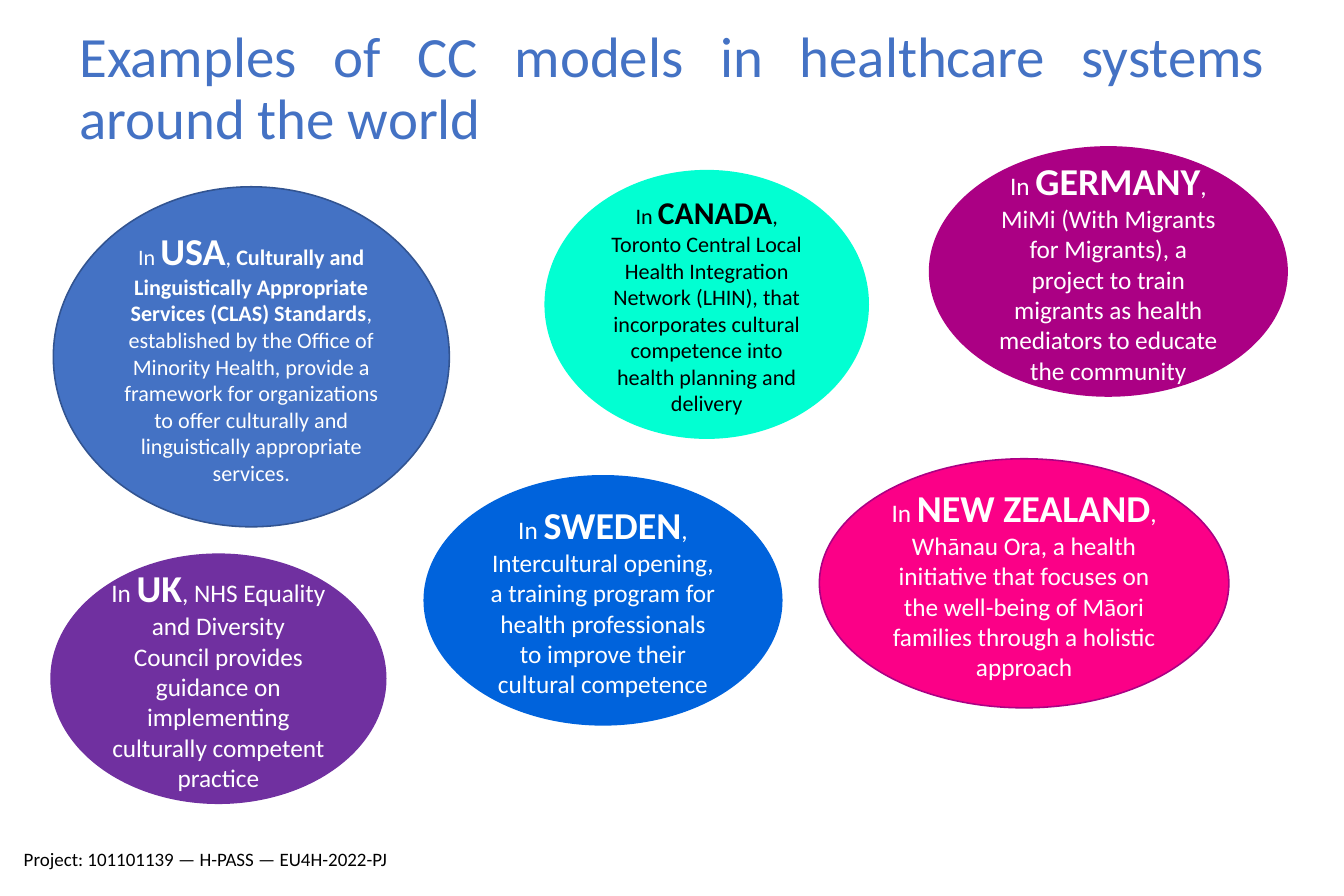
from pptx import Presentation
from pptx.dml.color import RGBColor
from pptx.enum.shapes import MSO_SHAPE
from pptx.enum.text import MSO_ANCHOR, PP_ALIGN
from pptx.util import Inches, Pt

ELLIPSE = MSO_SHAPE.OVAL
TOP, MIDDLE = MSO_ANCHOR.TOP, MSO_ANCHOR.MIDDLE
LEFT, CENTER, JUSTIFY = PP_ALIGN.LEFT, PP_ALIGN.CENTER, PP_ALIGN.JUSTIFY

WHITE = RGBColor(0xFF, 0xFF, 0xFF)
BLACK = RGBColor(0x00, 0x00, 0x00)
BLUE = RGBColor(0x44, 0x72, 0xC4)
DARK_BLUE = RGBColor(0x32, 0x54, 0x91)
AQUA = RGBColor(0x02, 0xFF, 0xD2)
PURPLE = RGBColor(0x70, 0x30, 0xA0)
ROYAL_BLUE = RGBColor(0x00, 0x63, 0xDC)
MAGENTA = RGBColor(0xAB, 0x00, 0x84)
PINK = RGBColor(0xFB, 0x00, 0x87)

FONT = "Calibri"
SLIDE_WIDTH, SLIDE_HEIGHT = Inches(11.81), Inches(7.87)
COLUMNS, ROWS = 300, 200

TITLE_BOX = (15.2, 5.1, 269.7, 27.7)
FOOTER_BOX = (2.8, 188, 92.2, 6.9)

COUNTRIES = [
    dict(box=(11.9, 41.7, 88.4, 75.9), country="USA", fill=BLUE, outline=DARK_BLUE,
         size=14, programme="Culturally and Linguistically Appropriate Services (CLAS) Standards",
         detail=", established by the Office of Minority Health, provide a framework for "
                "organizations to offer culturally and linguistically appropriate services."),
    dict(box=(121.7, 38.1, 72.1, 59.7), country="CANADA", fill=AQUA, outline=AQUA,
         size=14, country_size=20, color=BLACK,
         detail=", Toronto Central Local Health Integration Network (LHIN), that "
                "incorporates cultural competence into health planning and delivery"),
    dict(box=(11.4, 123.7, 74.7, 55.6), country="UK", fill=PURPLE, outline=PURPLE,
         detail=", NHS Equality and Diversity Council provides guidance on implementing "
                "culturally competent practice"),
    dict(box=(94.7, 106.2, 79.8, 55.6), country="SWEDEN", fill=ROYAL_BLUE, outline=ROYAL_BLUE,
         detail=", Intercultural opening, a training program for health professionals "
                "to improve their cultural competence"),
    dict(box=(207.5, 32.8, 79.8, 55.6), country="GERMANY", fill=MAGENTA, outline=MAGENTA,
         detail=", MiMi (With Migrants for Migrants), a project to train migrants as "
                "health mediators to educate the community"),
    dict(box=(182.9, 102.4, 91.4, 55.6), country="NEW ZEALAND", fill=PINK, outline=MAGENTA,
         detail=", Whānau Ora, a health initiative that focuses on the well-being of "
                "Māori families through a holistic approach"),
]


def place(box):
    left, top, width, height = box
    column, row = SLIDE_WIDTH / COLUMNS, SLIDE_HEIGHT / ROWS
    return [round(length) for length in (left * column, top * row, width * column, height * row)]


def write(paragraph, text, size, color, bold=False):
    run = paragraph.add_run()
    run.text = text
    run.font.name = FONT
    run.font.size = Pt(size)
    run.font.bold = bold
    run.font.color.rgb = color


def start_paragraph(shape, align, anchor, line_spacing=1.0):
    frame = shape.text_frame
    frame.word_wrap = True
    frame.vertical_anchor = anchor
    paragraph = frame.paragraphs[0]
    paragraph.alignment = align
    paragraph.line_spacing = line_spacing
    return paragraph


def add_caption(slide, box, text, size, color, align=LEFT, line_spacing=1.0):
    caption = slide.shapes.add_textbox(*place(box))
    paragraph = start_paragraph(caption, align, TOP, line_spacing)
    write(paragraph, text, size=size, color=color)


def add_country(slide, box, country, detail, fill, outline, programme=None,
                size=16, country_size=24, color=WHITE):
    bubble = slide.shapes.add_shape(ELLIPSE, *place(box))
    bubble.shadow.inherit = False
    bubble.fill.solid()
    bubble.fill.fore_color.rgb = fill
    bubble.line.color.rgb = outline
    bubble.line.width = Pt(1)
    paragraph = start_paragraph(bubble, CENTER, MIDDLE)
    write(paragraph, "In ", size=size, color=color)
    write(paragraph, country, size=country_size, color=color, bold=True)
    if programme:
        write(paragraph, ", ", size=size, color=color)
        write(paragraph, programme, size=size, color=color, bold=True)
    write(paragraph, detail, size=size, color=color)


def main():
    deck = Presentation()
    deck.slide_width, deck.slide_height = SLIDE_WIDTH, SLIDE_HEIGHT
    slide = deck.slides.add_slide(deck.slide_layouts[6])
    add_caption(slide, TITLE_BOX, "Examples of CC models in healthcare systems around the world",
                size=36, color=BLUE, align=JUSTIFY, line_spacing=0.9)
    for country in COUNTRIES:
        add_country(slide, **country)
    add_caption(slide, FOOTER_BOX, "Project: 101101139 — H-PASS — EU4H-2022-PJ",
                size=12, color=BLACK)
    deck.save("out.pptx")


if __name__ == "__main__":
    main()
